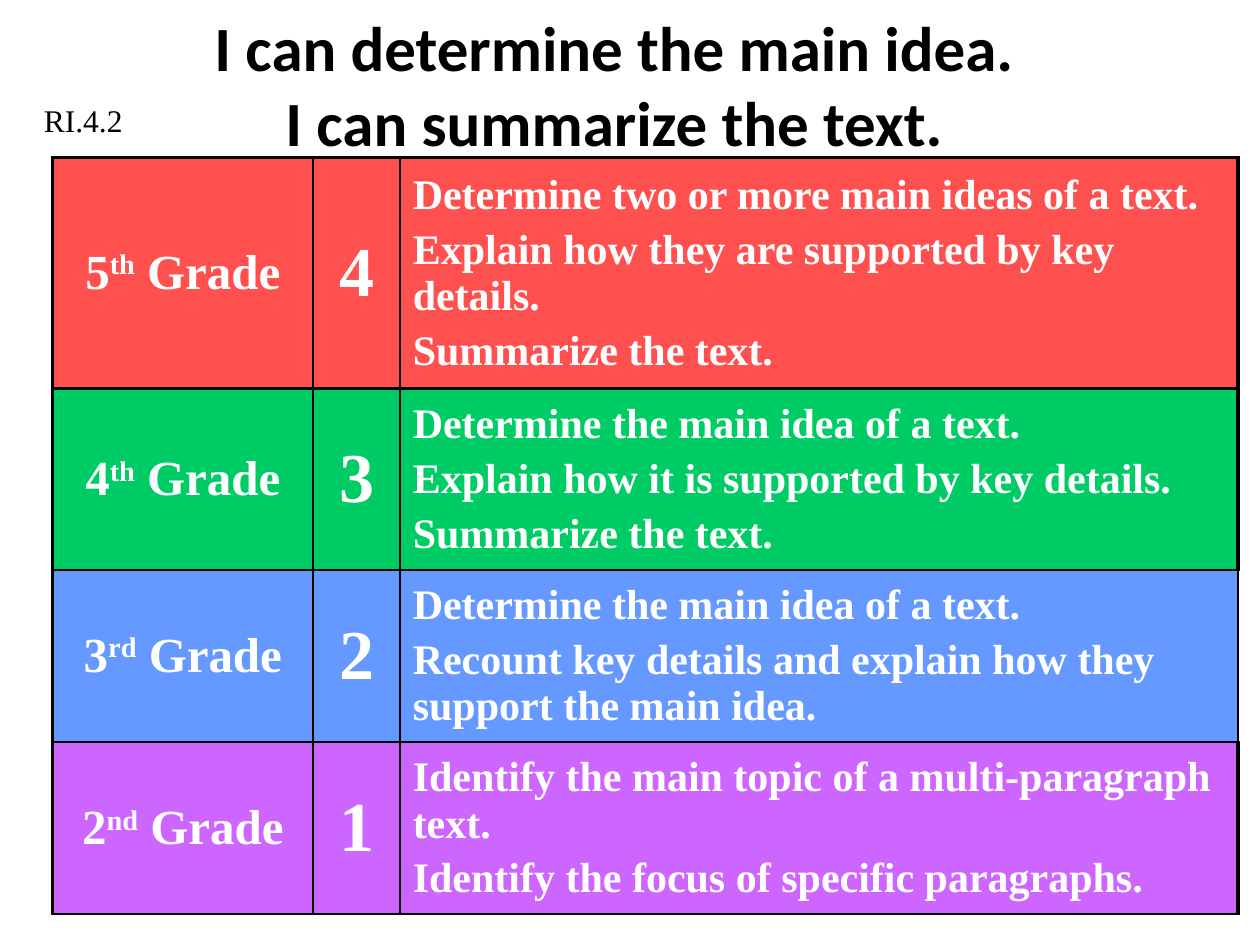
from dataclasses import dataclass

import pptx
import pptx.dml.color
import pptx.enum.text
import pptx.oxml
import pptx.oxml.ns
import pptx.util

Pt = pptx.util.Pt
ALIGN = pptx.enum.text.PP_ALIGN
MIDDLE = pptx.enum.text.MSO_ANCHOR.MIDDLE

COLOURS = {
    "black": "000000",
    "white": "FFFFFF",
    "red": "FF5050",
    "green": "00CC66",
    "blue": "6699FF",
    "purple": "CC66FF",
}
SERIF = "Times New Roman"
COLUMN_WIDTHS = (149, 49.7, 478.8)
SUPERSCRIPT = "30000"

# Border widths of a cell: left, right, top, bottom
Borders = tuple[float, float, float, float]


@dataclass
class GradeRow:
    ordinal: str
    suffix: str
    score: str
    skills: list[str]
    colour: str
    height: float
    borders: tuple[Borders, Borders, Borders]


GRADE_ROWS = [
    GradeRow("5", "th", "4",
             ["Determine two or more main ideas of a text.",
              "Explain how they are supported by key details.",
              "Summarize the text."],
             "red", 126.8,
             ((2.25, 1, 2.25, 1.5), (1, 1, 2.25, 1.5), (1, 2.25, 2.25, 1.5))),
    GradeRow("4", "th", "3",
             ["Determine the main idea of a text.",
              "Explain how it is supported by key details.",
              "Summarize the text."],
             "green", 103.6,
             ((2.25, 1, 1.5, 1), (1, 1, 1.5, 1), (1, 2.25, 1.5, 1.5))),
    GradeRow("3", "rd", "2",
             ["Determine the main idea of a text.",
              "Recount key details and explain how they support the main idea."],
             "blue", 97.8,
             ((2.25, 1.5, 1, 1), (1.5, 1.5, 1, 1), (1.5, 1.5, 1.5, 1.5))),
    GradeRow("2", "nd", "1",
             ["Identify the main topic of a multi-paragraph text.",
              "Identify the focus of specific paragraphs."],
             "purple", 97.8,
             ((2.25, 1, 1, 1.5), (1, 1, 1, 1.5), (1, 2.25, 1.5, 1.5))),
]


def rgb(colour: str) -> pptx.dml.color.RGBColor:
    return pptx.dml.color.RGBColor.from_string(COLOURS[colour])


def format_font(font, colour: str, **values) -> None:
    for name, value in values.items():
        setattr(font, name, value)
    font.color.rgb = rgb(colour)


def add_text(slide, text: str, box: tuple, alignment, anchor, **font_values) -> None:
    frame = slide.shapes.add_textbox(*map(Pt, box)).text_frame
    frame.word_wrap = True
    frame.vertical_anchor = anchor
    paragraph = frame.paragraphs[0]
    paragraph.text = text
    paragraph.alignment = alignment
    for run in paragraph.runs:
        format_font(run.font, "black", **font_values)


def set_borders(cell, widths: Borders) -> None:
    """Put the four border lines ahead of the cell's fill, as the schema asks."""
    properties = cell._tc.get_or_add_tcPr()
    for index, (side, width) in enumerate(zip("LRTB", widths)):
        properties.insert(index, pptx.oxml.parse_xml(
            f'<a:ln{side} {pptx.oxml.ns.nsdecls("a")} w="{Pt(width)}">'
            f'<a:solidFill><a:srgbClr val="{COLOURS["black"]}"/></a:solidFill>'
            f'</a:ln{side}>'))


def fill_cell(cell, paragraphs: list[list[str]], size: float, alignment,
              colour: str, borders: Borders) -> None:
    """Write paragraphs of runs; the second run of a paragraph is raised."""
    cell.vertical_anchor = MIDDLE
    cell.fill.solid()
    cell.fill.fore_color.rgb = rgb(colour)
    set_borders(cell, borders)
    frame = cell.text_frame
    for number, texts in enumerate(paragraphs):
        paragraph = frame.add_paragraph() if number else frame.paragraphs[0]
        paragraph.alignment = alignment
        paragraph.space_before = Pt(size * 0.2)
        for position, text in enumerate(texts):
            run = paragraph.add_run()
            run.text = text
            format_font(run.font, "white", name=SERIF, size=Pt(size), bold=True)
            if position == 1:
                run.font._element.set("baseline", SUPERSCRIPT)


def add_grade_table(slide, left: float, top: float) -> None:
    table = slide.shapes.add_table(
        len(GRADE_ROWS), len(COLUMN_WIDTHS), Pt(left), Pt(top),
        Pt(sum(COLUMN_WIDTHS)), Pt(sum(row.height for row in GRADE_ROWS))).table
    table.first_row = False
    table.horz_banding = False
    for column, width in zip(table.columns, COLUMN_WIDTHS):
        column.width = Pt(width)
    for table_row, grade in zip(table.rows, GRADE_ROWS):
        table_row.height = Pt(grade.height)
        contents = (
            ([[grade.ordinal, grade.suffix, " Grade"]], 28, ALIGN.CENTER),
            ([[grade.score]], 40, ALIGN.CENTER),
            ([[skill] for skill in grade.skills], 24, ALIGN.LEFT),
        )
        for cell, content, borders in zip(table_row.cells, contents, grade.borders):
            fill_cell(cell, *content, grade.colour, borders)


def main() -> None:
    presentation = pptx.Presentation()
    presentation.slide_width = Pt(720)
    presentation.slide_height = Pt(540)
    slide = presentation.slides.add_slide(presentation.slide_layouts[6])
    add_text(slide, "I can determine the main idea.\vI can summarize the text.",
             (12, 12, 678, 72), ALIGN.CENTER, MIDDLE,
             name="Calibri", size=Pt(36), bold=True)
    add_grade_table(slide, 30, 90)
    add_text(slide, "RI.4.2", (18, 54, 102, 29), ALIGN.LEFT,
             pptx.enum.text.MSO_ANCHOR.TOP, name=SERIF, size=Pt(18))
    presentation.save("out.pptx")


if __name__ == "__main__":
    main()
